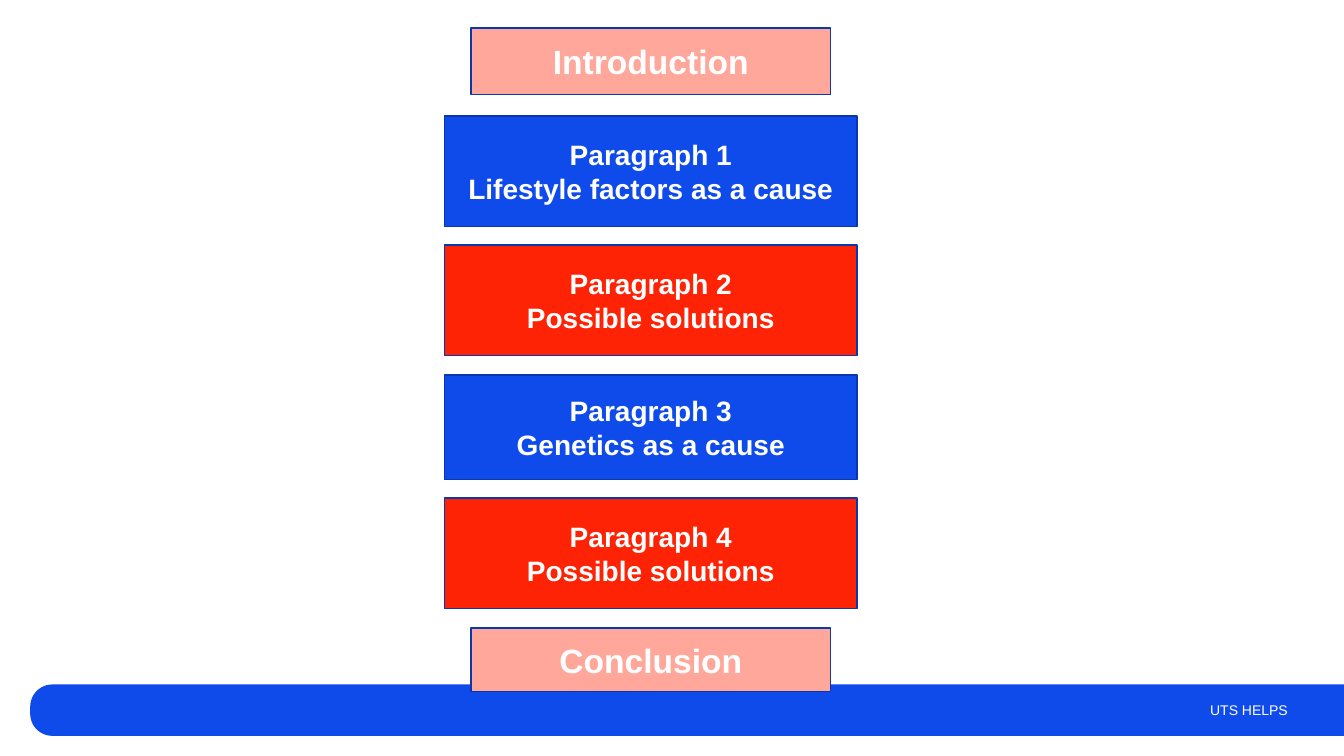
from pptx import Presentation
from pptx import util as u
from pptx.dml import color
from pptx.enum import shapes, text

COLOURS = {
    "blue": "0F4BEB",
    "red": "FF2305",
    "pink": "FFA79B",
    "outline": "0B37AE",
    "white": "FFFFFF",
}
COLUMNS, ROWS = 1333, 750
CELL = u.Inches(0.01)
CENTRE = 645.5
WIDE, NARROW = 409, 357

ESSAY_PARTS = [
    (28, 66, NARROW, "pink", 24, "Introduction"),
    (115, 110, WIDE, "blue", 20, "Paragraph 1\nLifestyle factors as a cause"),
    (243, 110, WIDE, "red", 20, "Paragraph 2\nPossible solutions"),
    (372, 104, WIDE, "blue", 20, "Paragraph 3\nGenetics as a cause"),
    (494, 110, WIDE, "red", 20, "Paragraph 4\nPossible solutions"),
    (623, 63, NARROW, "pink", 24, "Conclusion"),
]


def grid(*cells):
    """Turn grid cells into slide lengths."""
    return [round(cell * CELL) for cell in cells]


def rgb(name):
    """Look up a named colour."""
    return color.RGBColor.from_string(COLOURS[name])


def write(shape, words, size, alignment, bold=False):
    """Put white, vertically centred text in a shape."""
    frame = shape.text_frame
    frame.text = words
    frame.word_wrap = True
    frame.vertical_anchor = text.MSO_ANCHOR.MIDDLE
    for paragraph in frame.paragraphs:
        paragraph.alignment = alignment
        for run in paragraph.runs:
            run.font.name = "Arial"
            run.font.size = u.Pt(size)
            run.font.bold = bold
            run.font.color.rgb = rgb("white")


def add_block(slide, kind, place, fill):
    """Add a flat filled shape without an outline."""
    shape = slide.shapes.add_shape(kind, *grid(*place))
    shape.shadow.inherit = False
    shape.fill.solid()
    shape.fill.fore_color.rgb = rgb(fill)
    shape.line.fill.background()
    return shape


def add_essay_part(slide, top, height, width, fill, size, words):
    """Add one outlined box of the essay plan, centred on the stack."""
    place = (CENTRE - width / 2, top, width, height)
    box = add_block(slide, shapes.MSO_SHAPE.RECTANGLE, place, fill)
    box.line.color.rgb = rgb("outline")
    box.line.width = u.Pt(1)
    write(box, words, size, text.PP_ALIGN.CENTER, bold=True)


def add_footer_bar(slide):
    """Add the bar with rounded left corners that runs off to the right edge."""
    bar = add_block(slide, shapes.MSO_SHAPE.ROUND_2_SAME_RECTANGLE,
                    (656, 53, 51, 1303), "blue")
    bar.rotation = 270
    bar.adjustments[0] = 0.43
    bar.adjustments[1] = 0


def add_footer_text(slide):
    """Add the right-aligned footer label."""
    label = slide.shapes.add_textbox(*grid(696, 684, 591, 40))
    write(label, "UTS HELPS", 10, text.PP_ALIGN.RIGHT)


def main():
    """Build and save the essay plan slide."""
    presentation = Presentation()
    presentation.slide_width, presentation.slide_height = grid(COLUMNS, ROWS)
    slide = presentation.slides.add_slide(presentation.slide_layouts[6])
    add_footer_bar(slide)
    for part in ESSAY_PARTS:
        add_essay_part(slide, *part)
    add_footer_text(slide)
    presentation.save("out.pptx")


if __name__ == "__main__":
    main()
